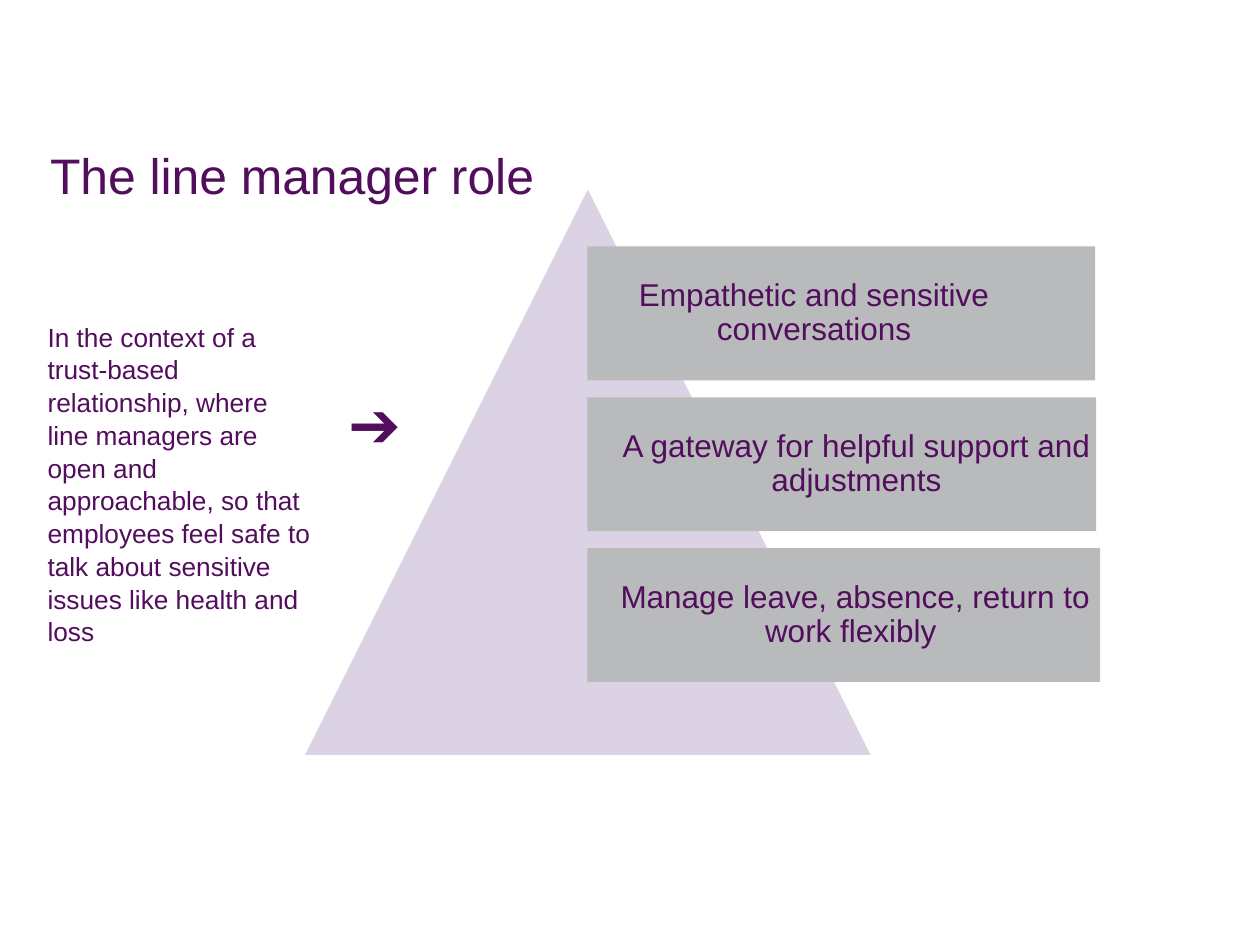
from pptx import Presentation
from pptx.dml.color import RGBColor
from pptx.enum.shapes import MSO_SHAPE
from pptx.enum.text import MSO_ANCHOR, PP_ALIGN
from pptx.util import Cm, Pt

COLORS = {"purple": "520D5D", "lilac": "DBD3E5", "grey": "B8BABC"}

presentation = Presentation()
presentation.slide_width = Cm(25.4)
presentation.slide_height = Cm(19.05)
slide = presentation.slides.add_slide(presentation.slide_layouts[6])


def add_text(text, left, top, width, height, size, spacing=1.0,
             align=PP_ALIGN.LEFT, anchor=MSO_ANCHOR.TOP, inset=None):
    frame = slide.shapes.add_textbox(Cm(left), Cm(top), Cm(width), Cm(height)).text_frame
    frame.word_wrap = True
    frame.vertical_anchor = anchor
    if inset is not None:
        frame.margin_left = frame.margin_right = Cm(inset)
        frame.margin_top = frame.margin_bottom = Cm(inset)
    paragraph = frame.paragraphs[0]
    paragraph.alignment = align
    paragraph.line_spacing = spacing
    run = paragraph.add_run()
    run.text = text
    run.font.name = "Arial"
    run.font.size = Pt(size)
    run.font.color.rgb = RGBColor.from_string(COLORS["purple"])


def add_block(preset, left, top, width, height, color):
    block = slide.shapes.add_shape(preset, Cm(left), Cm(top), Cm(width), Cm(height))
    block.shadow.inherit = False
    block.fill.solid()
    block.fill.fore_color.rgb = RGBColor.from_string(COLORS[color])
    block.line.fill.background()


add_text("The line manager role", 0.76, 3.2, 23.22, 1.07, 28.5,
         spacing=0.9, anchor=MSO_ANCHOR.BOTTOM)
add_block(MSO_SHAPE.ISOSCELES_TRIANGLE, 6.15, 3.82, 11.4, 11.4, "lilac")

roles = [
    ("Empathetic and sensitive conversations", 10.24, 9.14),
    ("A gateway for helpful support and adjustments", 10.26, 10.85),
    ("Manage leave, absence, return to work flexibly ", 10.34, 10.8),
]
role_left, role_top, role_height, role_pitch = 11.84, 4.97, 2.7, 3.04
for index, (role, bar_width, text_width) in enumerate(roles):
    top = role_top + index * role_pitch
    add_block(MSO_SHAPE.RECTANGLE, role_left, top, bar_width, role_height, "grey")
    add_text(role, role_left, top, text_width, role_height, 18, spacing=0.9,
             align=PP_ALIGN.CENTER, anchor=MSO_ANCHOR.MIDDLE, inset=0.23)

add_text("In the context of a trust-based relationship, where line managers are open "
         "and approachable, so that employees feel safe to talk about sensitive issues "
         "like health and loss", 0.71, 6.32, 5.82, 7.24, 15, spacing=1.04)
add_text("➔", 6.78, 7.62, 1.73, 1.8, 36)

presentation.save("out.pptx")
